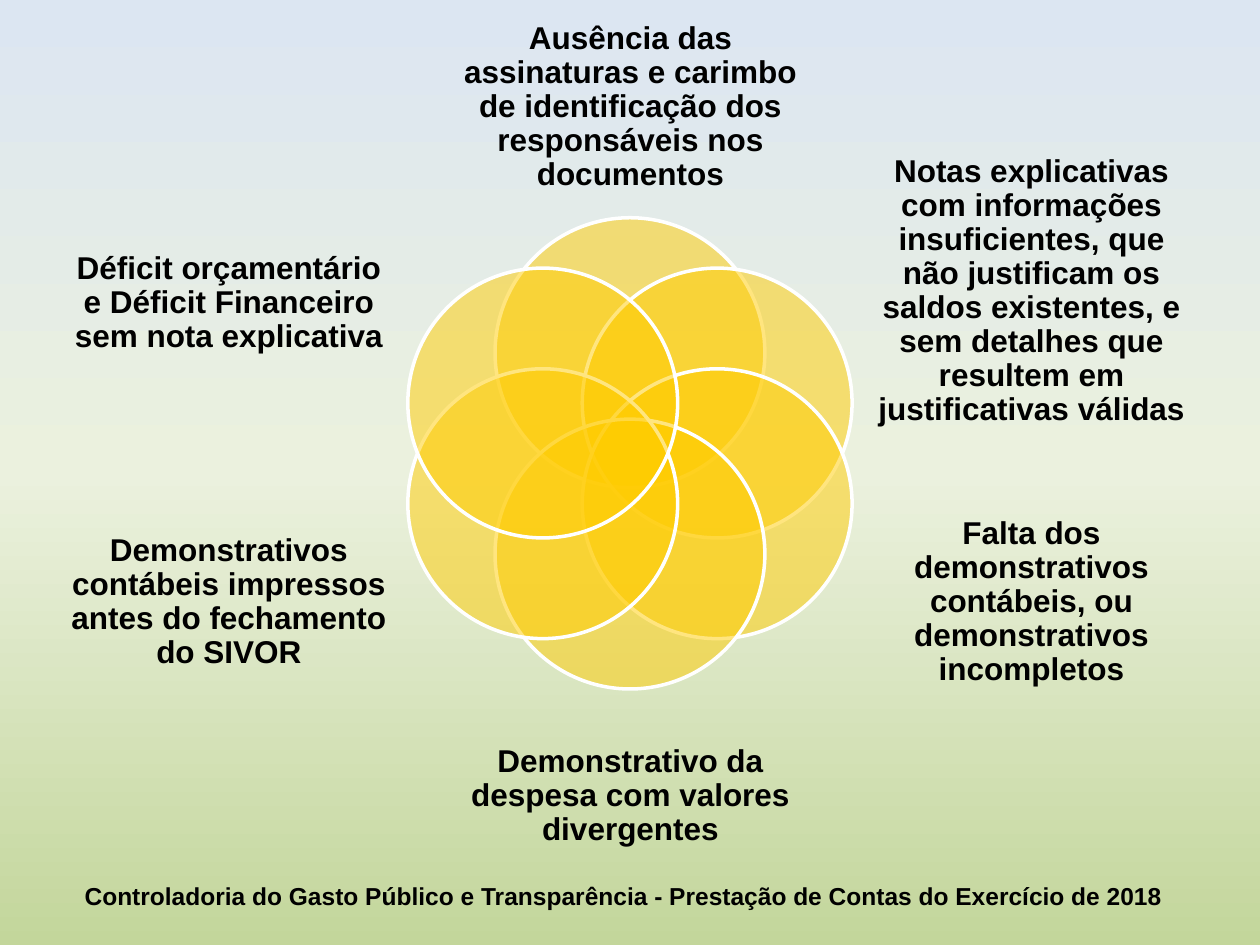
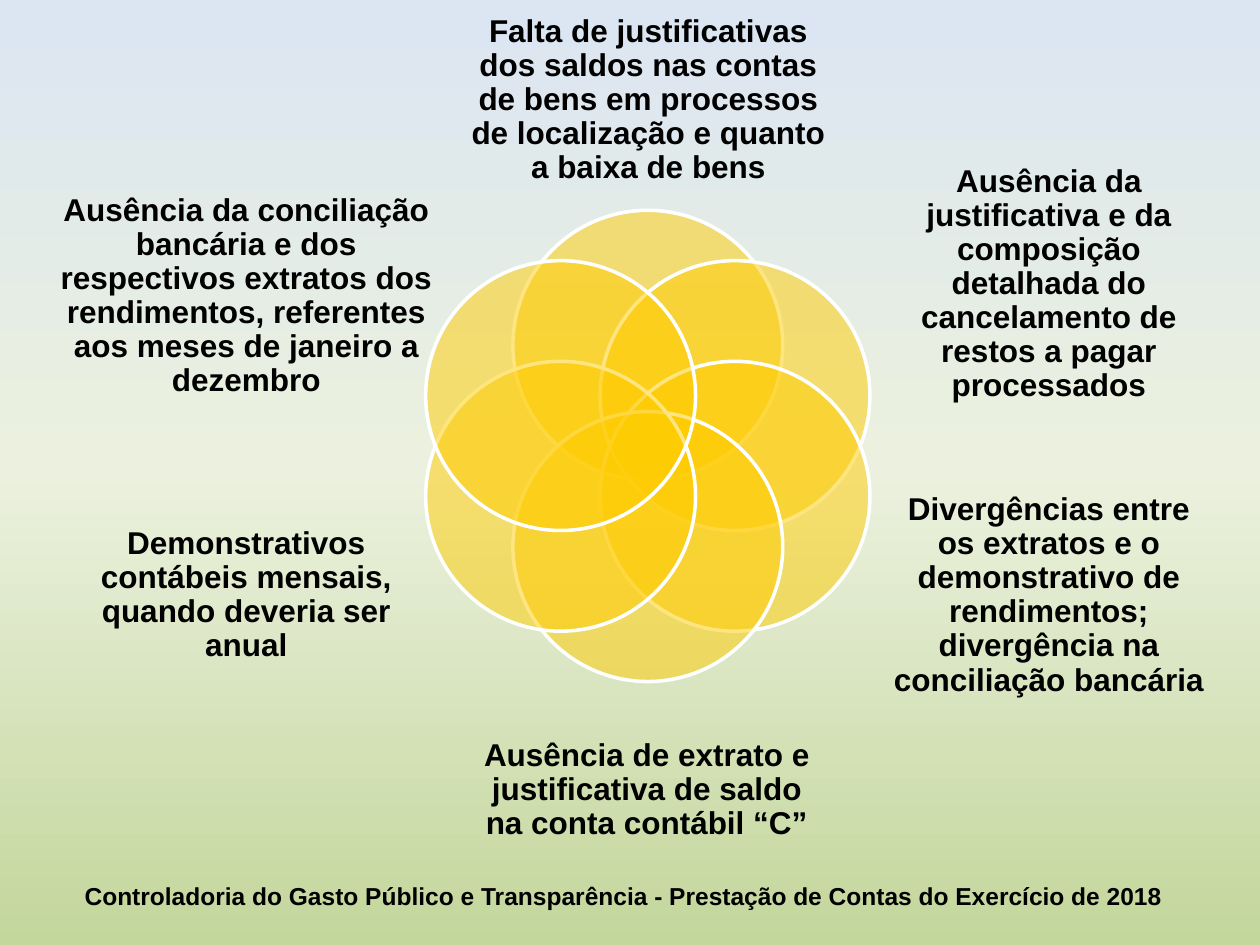
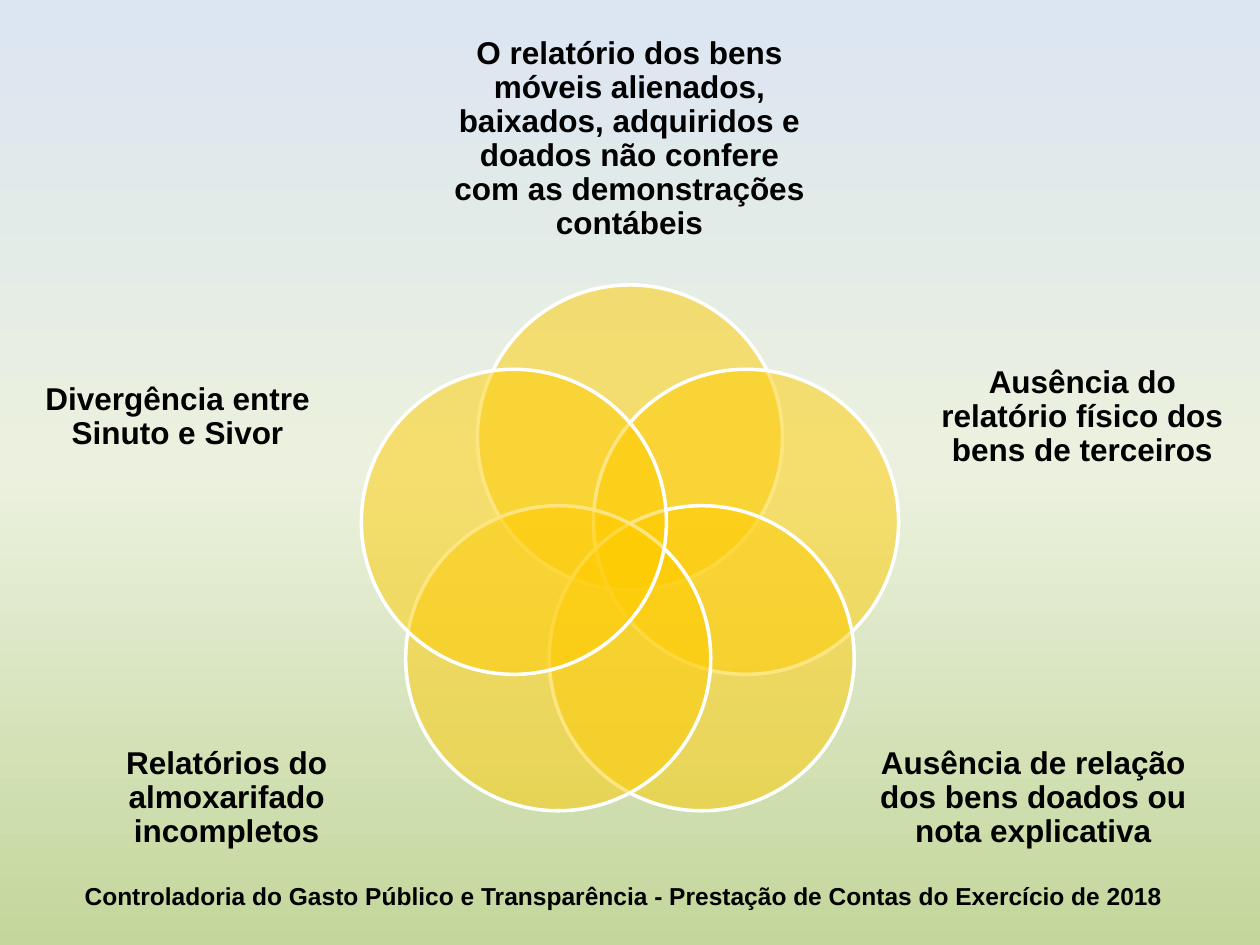
from copy import deepcopy
from math import cos, pi, sin

from lxml.etree import SubElement
from pptx import Presentation
from pptx.dml.color import RGBColor
from pptx.enum.shapes import MSO_SHAPE as Shape
from pptx.enum.text import MSO_ANCHOR as Anchor, MSO_AUTO_SIZE as AutoSize, PP_ALIGN as Align
from pptx.oxml.ns import qn
from pptx.util import Cm, Pt

FONT = "Arial"
BLACK, WHITE, YELLOW = "000000", "FFFFFF", "FFCC00"
BACKGROUND_STOPS = [(0, "DCE6F2"), (0.5, "EBF1DE"), (1, "C3D69B")]
FOOTER = ("Controladoria do Gasto Público e Transparência - "
          "Prestação de Contas do Exercício de 2018")

# Each flower: centre, distance from it to the petal centres, petal diameter,
# and one label per petal, clockwise from the top: text, (left, top, width, height).
# All lengths are in centimetres.
FLOWERS = [
    {
        "centre": (12.7, 9.14), "radius": 2.03, "diameter": 5.44,
        "labels": [
            ("Ausência das assinaturas e carimbo de identificação dos responsáveis "
             "nos documentos", (9.32, 0.33, 6.78, 3.68)),
            ("Notas explicativas com informações insuficientes, que não justificam os "
             "saldos existentes, e sem detalhes que resultem em justificativas válidas",
             (17.58, 3.58, 6.43, 4.6)),
            ("Falta dos demonstrativos contábeis, ou demonstrativos incompletos",
             (17.58, 9.88, 6.43, 4.52)),
            ("Demonstrativo da despesa com valores divergentes",
             (9.32, 14.22, 6.78, 3.68)),
            ("Demonstrativos contábeis impressos antes do fechamento do SIVOR",
             (1.4, 9.88, 6.43, 4.52)),
            ("Déficit orçamentário e Déficit Financeiro sem nota explicativa",
             (1.4, 3.86, 6.43, 4.52)),
        ],
    },
    {
        "centre": (13.06, 8.99), "radius": 2.03, "diameter": 5.44,
        "labels": [
            ("Falta de justificativas dos saldos nas contas de bens em processos de "
             "localização e quanto a baixa de bens", (9.3, -0.36, 7.54, 4.78)),
            ("Ausência da justificativa e da composição detalhada do cancelamento de "
             "restos a pagar processados", (17.93, 3.71, 6.43, 4.04)),
            ("Divergências entre os extratos e o demonstrativo de rendimentos; "
             "divergência na conciliação bancária", (17.93, 9.75, 6.43, 4.52)),
            ("Ausência de extrato e justificativa de saldo na conta contábil “C”",
             (9.65, 14.1, 6.78, 3.68)),
            ("Demonstrativos contábeis mensais, quando deveria ser anual",
             (1.75, 9.75, 6.43, 4.52)),
            ("Ausência da conciliação bancária e dos respectivos extratos dos "
             "rendimentos, referentes aos meses de janeiro a dezembro",
             (1.04, 3.71, 7.85, 4.52)),
        ],
    },
    {
        "centre": (12.7, 11.28), "radius": 2.46, "diameter": 6.15,
        "labels": [
            ("O relatório dos bens móveis alienados, baixados, adquiridos e doados não "
             "confere com as demonstrações contábeis", (9.12, 0.74, 7.14, 4.14)),
            ("Ausência do relatório físico dos bens de terceiros",
             (18.62, 6.17, 6.4, 4.5)),
            ("Ausência de relação dos bens doados ou nota explicativa",
             (17.63, 13.84, 6.4, 4.5)),
            ("Relatórios do almoxarifado incompletos", (1.37, 13.84, 6.4, 4.5)),
            ("Divergência entre Sinuto e Sivor", (0.38, 6.17, 6.4, 4.5)),
        ],
    },
]


def color(hex_string):
    return RGBColor.from_string(hex_string)


class Deck:
    """Holds the presentation, its style and the current slide."""

    def __init__(self):
        self.presentation = Presentation()
        self.presentation.slide_width = Cm(25.4)
        self.presentation.slide_height = Cm(19.05)
        self.master = self.presentation.slide_master
        self.slide = None
        self.paint_background()

    def paint_background(self):
        fill = self.master.background.fill
        fill.gradient()
        fill.gradient_angle = 270
        stop_list = self.master.element.find(".//" + qn("a:gsLst"))
        stop_list.append(deepcopy(stop_list[-1]))
        for stop, (position, hex_string) in zip(fill.gradient_stops, BACKGROUND_STOPS):
            stop.position = position
            stop.color.rgb = color(hex_string)

    def add_slide(self):
        blank_layout = self.presentation.slide_layouts[6]
        self.slide = self.presentation.slides.add_slide(blank_layout)

    def add_text(self, shapes, text, box, size, align):
        text_box = shapes.add_textbox(*map(Cm, box))
        frame = text_box.text_frame
        frame.word_wrap = True
        paragraph = frame.paragraphs[0]
        paragraph.alignment = align
        run = paragraph.add_run()
        run.text = text
        run.font.name = FONT
        run.font.size = Pt(size)
        run.font.bold = True
        run.font.color.rgb = color(BLACK)
        return text_box

    def add_master_footer(self):
        """Build the footer on the current slide, then move it to the master."""
        footer = self.add_text(self.slide.shapes, FOOTER, (1.4, 17.63, 22.3, 0.86),
                               14, Align.RIGHT)
        footer.text_frame.auto_size = AutoSize.SHAPE_TO_FIT_TEXT
        self.master.shapes.element.append(footer.element)

    def add_label(self, shapes, text, box):
        frame = self.add_text(shapes, text, box, 18, Align.CENTER).text_frame
        frame.vertical_anchor = Anchor.MIDDLE
        frame.margin_left = frame.margin_top = frame.margin_right = frame.margin_bottom = 0
        frame.paragraphs[0].line_spacing = 0.9

    def add_petal(self, shapes, center_x, center_y, diameter):
        petal = shapes.add_shape(Shape.OVAL, Cm(center_x - diameter / 2),
                                 Cm(center_y - diameter / 2), Cm(diameter), Cm(diameter))
        petal.shadow.inherit = False
        petal.fill.solid()
        petal.fill.fore_color.rgb = color(YELLOW)
        fill_color = petal.element.spPr.find(qn("a:solidFill"))[0]
        SubElement(fill_color, qn("a:alpha"), val="50000")
        petal.line.color.rgb = color(WHITE)
        petal.line.width = Pt(2)

    def add_flower(self, centre, radius, diameter, labels):
        """Draw overlapping petals evenly around a centre, each with its label."""
        shapes = self.slide.shapes.add_group_shape().shapes
        for index, (text, box) in enumerate(labels):
            angle = 2 * pi * index / len(labels)
            self.add_petal(shapes, centre[0] + radius * sin(angle),
                           centre[1] - radius * cos(angle), diameter)
            self.add_label(shapes, text, box)


def main():
    deck = Deck()
    for flower in FLOWERS:
        deck.add_slide()
        deck.add_flower(**flower)
    deck.add_master_footer()
    deck.presentation.save("out.pptx")


if __name__ == "__main__":
    main()
